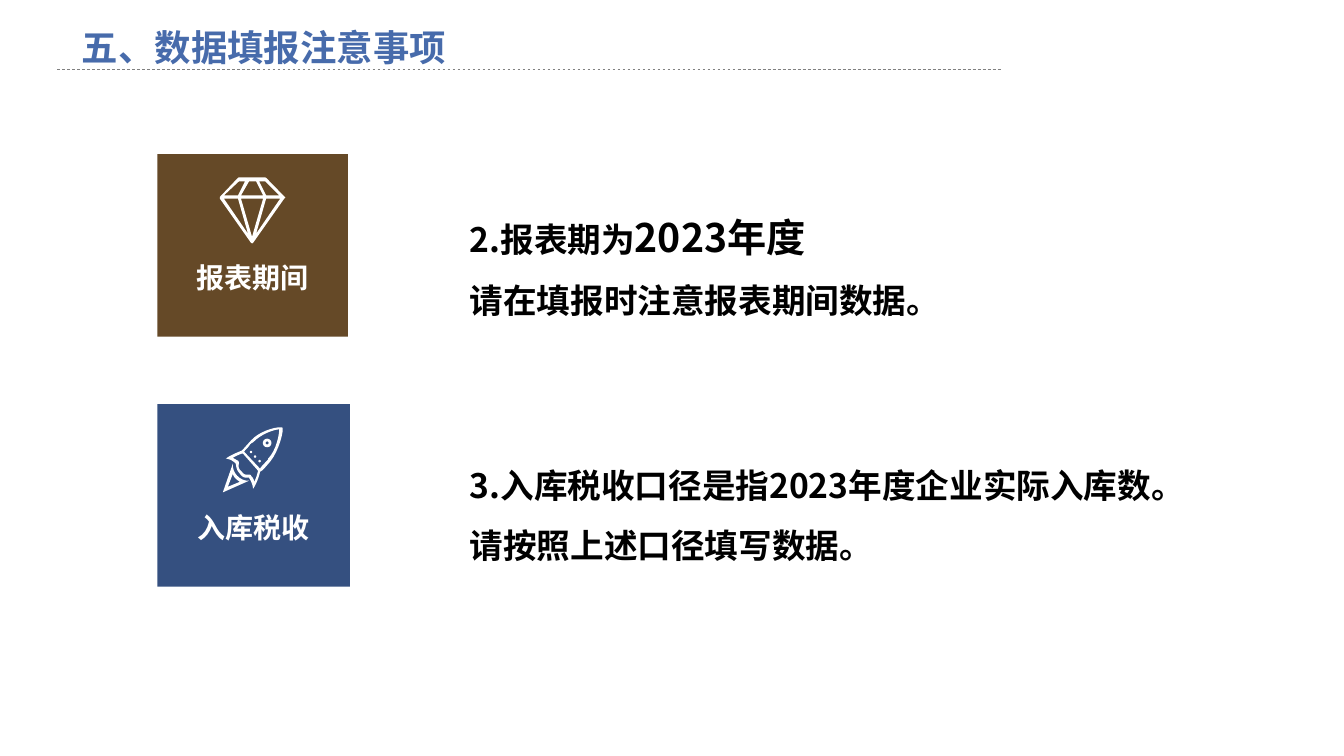
from dataclasses import dataclass
from math import cos, pi, sin

from lxml.etree import SubElement
from pptx import Presentation
from pptx.dml.color import RGBColor
from pptx.enum.dml import MSO_LINE
from pptx.enum.shapes import MSO_CONNECTOR, MSO_SHAPE
from pptx.enum.text import MSO_ANCHOR, MSO_AUTO_SIZE, PP_ALIGN
from pptx.oxml.ns import qn
from pptx.util import Inches, Pt


@dataclass(frozen=True)
class Theme:
    font: str = "Noto Sans CJK SC"
    title: str = "476BAB"
    rule: str = "808080"
    brown: str = "654927"
    blue: str = "355080"
    white: str = "FFFFFF"
    black: str = "000000"
    label_size: int = 20
    body_size: int = 24
    title_size: int = 26
    large_size: int = 28


THEME = Theme()


def circle(cx, cy, radius, count=24):
    angles = [2 * pi * i / count for i in range(count)]
    return [(cx + radius * cos(a), cy + radius * sin(a)) for a in angles]


DIAMOND = [
    [(0, 19.5), (18, 0.5), (19, 0), (45, 0), (46, 0.5), (64, 19), (65, 20),
     (64, 21), (33, 65), (32, 65.5), (31, 65), (0, 21)],
    [(45, 4), (59, 18), (46, 18), (39, 4)],
    [(36, 4), (43, 18), (21, 18), (29, 4)],
    [(19, 4), (25, 4), (18, 18), (4, 18)],
    [(4, 21), (18, 21), (28, 56)],
    [(32, 59), (21, 21), (43, 21)],
    [(36, 56), (46, 21), (60, 21)],
]

ROCKET = [
    [(10, 36), (0, 64.5), (26, 53), (25, 53), (17, 53, 9, 45, 10, 36)],
    [(5, 59), (10, 46), (10, 47, 11, 49, 12, 50), (13, 51, 15, 53, 17, 54)],
    [(59, 0), (56, 0), (51, 0, 36, 4, 28, 13), (19, 23),
     (14, 25, 7, 28, 3, 31), (3, 31, 8, 31, 13, 36),
     (13, 39, 14, 43, 17, 46), (19, 49, 21, 50, 24, 50), (26, 50),
     (30, 56, 30, 61, 30, 61), (33, 57, 36, 49, 37, 44),
     (40, 43, 45, 36, 47, 34), (56, 23, 61, 2, 59, 0)],
    [(35, 43), (34, 47, 33, 51, 31, 54), (31, 52, 30, 50, 28, 48),
     (28, 47, 27, 47, 26, 47), (24, 47), (22, 47, 20, 46, 19, 44),
     (16, 42, 15, 39, 16, 36), (16, 35, 16, 34, 15, 33),
     (13, 32, 11, 31, 10, 30), (12, 29, 16, 27, 19, 26), (20, 26)],
    [(45, 31), (45, 32, 44, 33, 43, 34), (41, 36, 38, 39, 37, 41), (21, 24),
     (23, 22, 26, 19, 27, 17), (28, 16, 29, 15, 30, 15),
     (37, 7, 51, 2, 56, 2), (56, 7, 53, 23, 45, 31)],
    circle(44, 15.5, 4.25),
    circle(44, 15.5, 1.5),
    circle(28, 24.5, 1.2),
    circle(32, 29, 1.2),
    circle(36.5, 33.5, 1.2),
]


def flatten(contour, steps=8):
    points = []
    for node in contour:
        if len(node) == 2:
            points.append(node)
            continue
        x0, y0 = points[-1]
        x1, y1, x2, y2, x3, y3 = node
        for i in range(1, steps + 1):
            t = i / steps
            u = 1 - t
            a, b, c, d = u ** 3, 3 * u * u * t, 3 * u * t * t, t ** 3
            points.append((a * x0 + b * x1 + c * x2 + d * x3,
                           a * y0 + b * y1 + c * y2 + d * y3))
    return points


def set_format(target, **values):
    for name, value in values.items():
        setattr(target, name, value)


def paint(sp, color):
    sp.shadow.inherit = False
    sp.fill.solid()
    sp.fill.fore_color.rgb = RGBColor.from_string(color)
    sp.line.fill.background()


def add_run(p, text, size, color):
    r = p.add_run()
    r.text = text
    set_format(r.font, name=THEME.font, size=Pt(size), bold=True)
    r.font.color.rgb = RGBColor.from_string(color)
    SubElement(r.font._element, qn("a:ea")).set("typeface", THEME.font)


def add_icon(s, contours, left, top):
    builder = None
    for contour in contours:
        points = [(Inches(x / 100), Inches(y / 100)) for x, y in flatten(contour)]
        if builder is None:
            builder = s.shapes.build_freeform(*points[0])
        else:
            builder.move_to(*points[0])
        builder.add_line_segments(points[1:], close=True)
    paint(builder.convert_to_shape(Inches(left), Inches(top)), THEME.white)


def add_title(s, left, top, width, height, text):
    tf = s.shapes.add_textbox(*map(Inches, (left, top, width, height))).text_frame
    set_format(tf, word_wrap=True, vertical_anchor=MSO_ANCHOR.MIDDLE)
    p = tf.paragraphs[0]
    set_format(p, alignment=PP_ALIGN.CENTER, line_spacing=0.9)
    add_run(p, text, THEME.title_size, THEME.title)

    x, y = left + 0.39, top + 0.56
    line = s.shapes.add_connector(MSO_CONNECTOR.STRAIGHT,
                                  *map(Inches, (x, y, x + 9.37, y)))
    line.line.color.rgb = RGBColor.from_string(THEME.rule)
    set_format(line.line, width=Pt(0.5), dash_style=MSO_LINE.DASH)
    SubElement(line._element.spPr, qn("a:effectLst"))


def add_card(s, left, top, width, height, color, label, icon, icon_x):
    sp = s.shapes.add_shape(MSO_SHAPE.RECTANGLE,
                            *map(Inches, (left, top, width, height)))
    paint(sp, color)
    set_format(sp.text_frame, word_wrap=True, margin_top=Inches(0.69),
               vertical_anchor=MSO_ANCHOR.MIDDLE)
    p = sp.text_frame.paragraphs[0]
    p.alignment = PP_ALIGN.CENTER
    add_run(p, label, THEME.label_size, THEME.white)
    add_icon(s, icon, left + icon_x, top + 0.23)


def add_note(s, left, top, width, height, lines):
    tf = s.shapes.add_textbox(*map(Inches, (left, top, width, height))).text_frame
    set_format(tf, word_wrap=True, auto_size=MSO_AUTO_SIZE.SHAPE_TO_FIT_TEXT)
    for i, runs in enumerate(lines):
        p = tf.add_paragraph() if i else tf.paragraphs[0]
        p.line_spacing = 1.5
        for text, size in runs:
            add_run(p, text, size, THEME.black)


def main():
    prs = Presentation()
    set_format(prs, slide_width=Inches(13.33), slide_height=Inches(7.5))
    s = prs.slides.add_slide(prs.slide_layouts[6])
    body, large = THEME.body_size, THEME.large_size

    add_card(s, 1.56, 1.53, 1.89, 1.81, THEME.brown, "报表期间", DIAMOND, 0.62)
    add_card(s, 1.56, 4.01, 1.91, 1.81, THEME.blue, "入库税收", ROCKET, 0.65)
    add_note(s, 4.56, 1.83, 6.55, 1.41, [
        [("2.报表期为", body), ("2023年度", large)],
        [("请在填报时注意报表期间数据。", body)],
    ])
    add_note(s, 4.56, 4.36, 7.81, 1.31, [
        [("3.入库税收口径是指2023年度企业实际入库数。", body)],
        [("请按照上述口径填写数据。", body)],
    ])
    add_title(s, 0.18, 0.13, 4.88, 0.73, "五、数据填报注意事项")
    prs.save("out.pptx")


if __name__ == "__main__":
    main()
